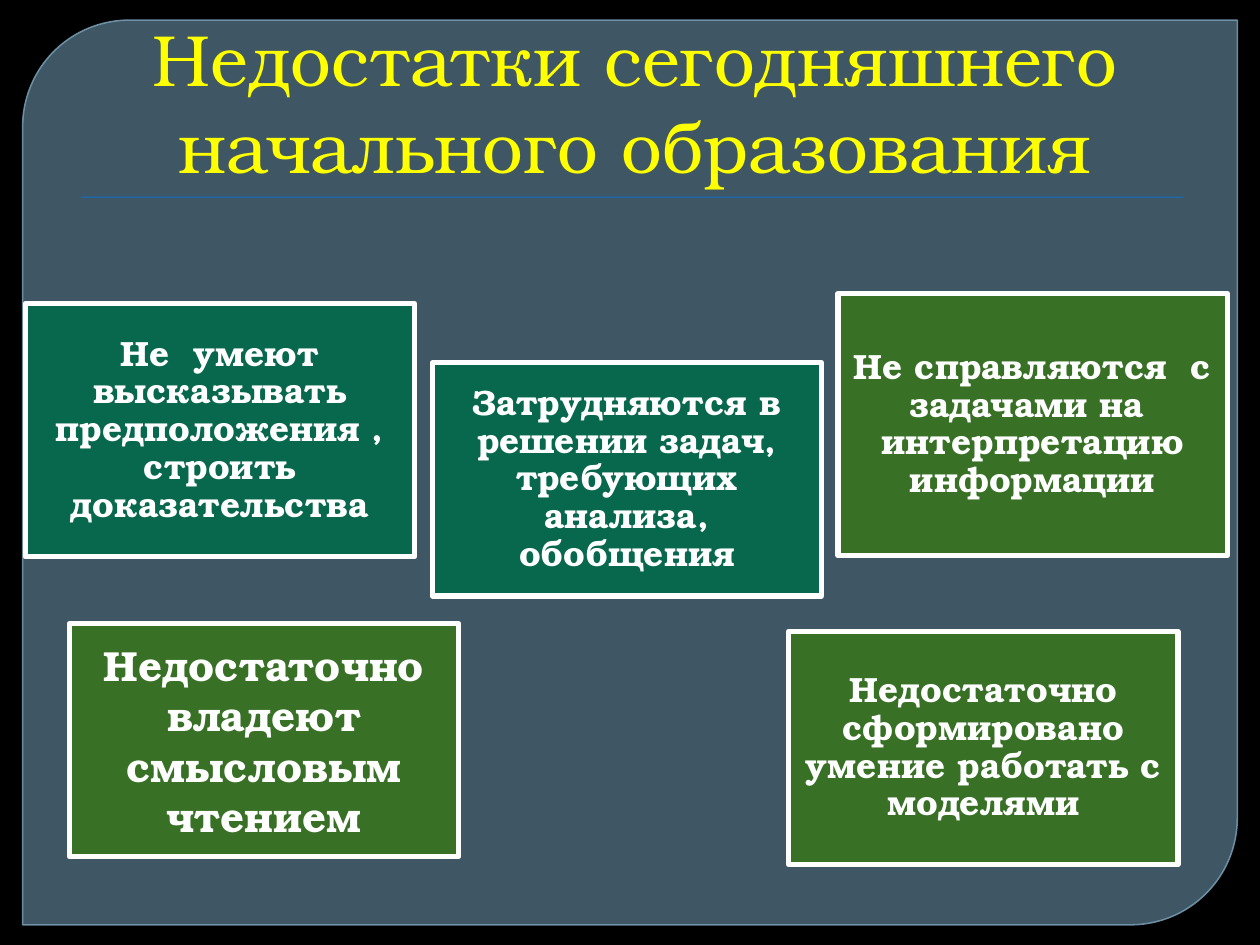
from lxml import etree
from pptx import Presentation
from pptx.dml.color import RGBColor
from pptx.enum import shapes, text
from pptx.oxml.ns import qn
from pptx.util import Inches, Pt

FONT = "TeX Gyre Bonum"
BLACK = RGBColor(0x00, 0x00, 0x00)
PANEL = RGBColor(0x61, 0x86, 0x9C)
PANEL_EDGE = RGBColor(0x77, 0x9B, 0xB2)
BLUE = RGBColor(0x0F, 0x6F, 0xC6)
YELLOW = RGBColor(0xFF, 0xFF, 0x00)
WHITE = RGBColor(0xFF, 0xFF, 0xFF)
GREEN = RGBColor(0x38, 0x70, 0x26)
TEAL = RGBColor(0x08, 0x68, 0x4E)

CARD_WIDTH = 3.09

# wording, left, top, height, fill, text size, line spacing, inset
CARDS = [
    ("Недостаточно владеют смысловым чтением",
     0.55, 4.95, 1.85, GREEN, 24, 1.0, 0.1),
    ("Затрудняются в решении задач, требующих анализа, обобщения",
     3.43, 2.88, 1.85, TEAL, 20, 0.9, 0.08),
    ("Не справляются  с задачами на  интерпретацию информации",
     6.65, 2.33, 2.08, GREEN, 20, 0.9, 0.08),
    ("Не  умеют высказывать предположения , строить доказательства",
     0.2, 2.41, 2.01, TEAL, 20, 0.9, 0.08),
    ("Недостаточно сформировано умение работать с моделями",
     6.26, 5.01, 1.85, GREEN, 20, 0.9, 0.08),
]


def add_block(slide, kind, left, top, width, height, fill, edge=None, edge_width=0):
    block = slide.shapes.add_shape(
        kind, Inches(left), Inches(top), Inches(width), Inches(height))
    block.shadow.inherit = False
    block.fill.solid()
    block.fill.fore_color.rgb = fill
    if edge is None:
        block.line.fill.background()
    else:
        block.line.color.rgb = edge
        block.line.width = Pt(edge_width)
    return block


def set_opacity(fill_parent, percent):
    """Set the opacity of the solid fill directly inside an XML element."""
    color = fill_parent.find(qn("a:solidFill"))[0]
    etree.SubElement(color, qn("a:alpha"), val=str(percent * 1000))


def write(frame, wording, size, color, anchor, bold=False, spacing=1.0):
    frame.word_wrap = True
    frame.vertical_anchor = anchor
    frame.text = wording
    paragraph = frame.paragraphs[0]
    paragraph.alignment = text.PP_ALIGN.CENTER
    paragraph.line_spacing = spacing
    font = paragraph.runs[0].font
    font.name = FONT
    font.size = Pt(size)
    font.bold = bold
    font.color.rgb = color


def add_backdrop(slide):
    slide.background.fill.solid()
    slide.background.fill.fore_color.rgb = BLACK
    panel = add_block(slide, shapes.MSO_SHAPE.ROUND_2_DIAG_RECTANGLE,
                      0.18, 0.16, 9.64, 7.18, PANEL, PANEL_EDGE, 0.87)
    panel.adjustments[0] = 0.118
    panel.adjustments[1] = 0
    properties = panel.fill._xPr
    set_opacity(properties, 65)
    set_opacity(properties.find(qn("a:ln")), 88)
    add_block(slide, shapes.MSO_SHAPE.RECTANGLE, 0.64, 1.56, 8.75, 0.01, BLUE)


def add_title(slide):
    title = slide.shapes.add_textbox(
        Inches(0.51), Inches(0.29), Inches(9), Inches(1.25))
    write(title.text_frame, "Недостатки сегодняшнего начального образования",
          41.4, YELLOW, text.MSO_ANCHOR.BOTTOM)
    # The first-level margin shifts the centred lines slightly to the right.
    title.text_frame.paragraphs[0]._p.get_or_add_pPr().set("marL", str(Inches(0.06)))


def add_card(slide, wording, left, top, height, fill, size, spacing, inset):
    card = add_block(slide, shapes.MSO_SHAPE.RECTANGLE,
                     left, top, CARD_WIDTH, height, fill, WHITE, 3)
    frame = card.text_frame
    frame.margin_left = frame.margin_right = Inches(inset)
    frame.margin_top = frame.margin_bottom = Inches(inset)
    write(frame, wording, size, WHITE, text.MSO_ANCHOR.MIDDLE, True, spacing)


def main():
    deck = Presentation()
    deck.slide_width, deck.slide_height = Inches(10), Inches(7.5)
    slide = deck.slides.add_slide(deck.slide_layouts[6])
    add_backdrop(slide)
    add_title(slide)
    for card in CARDS:
        add_card(slide, *card)
    deck.save("out.pptx")


if __name__ == "__main__":
    main()
